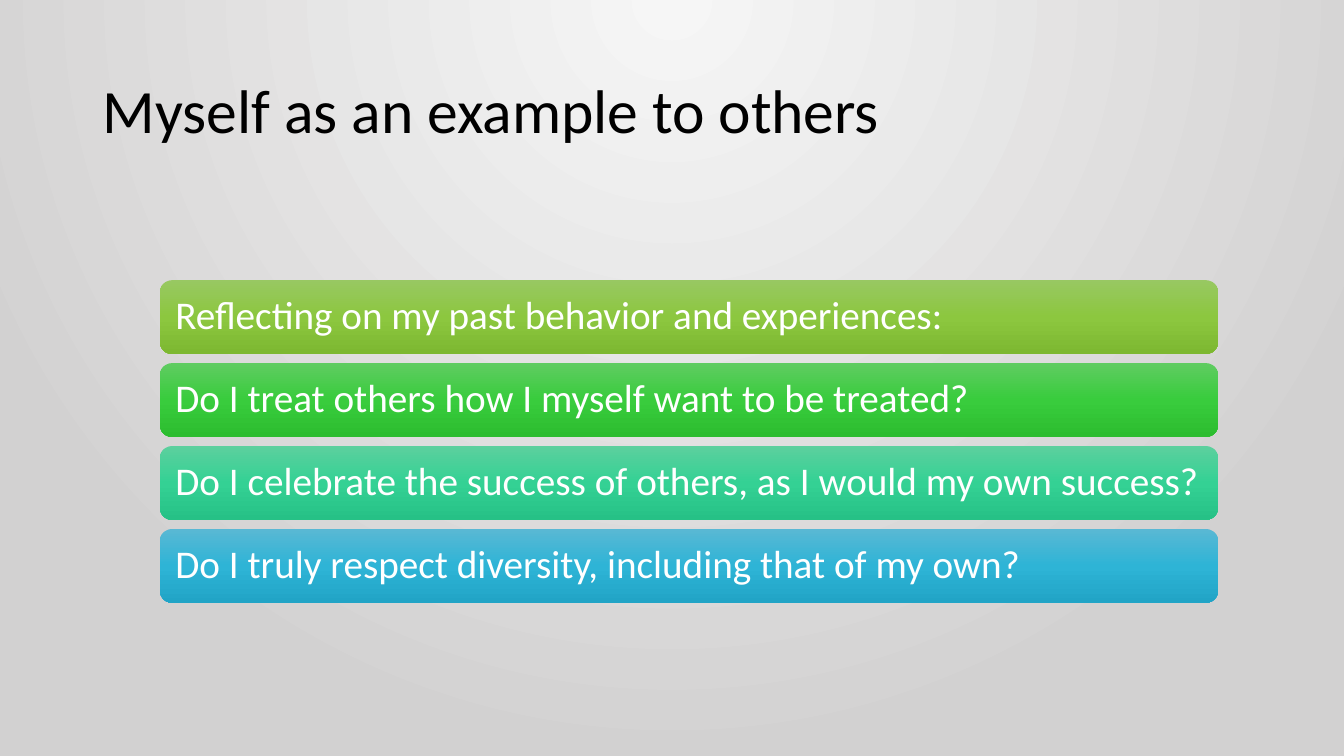
from dataclasses import dataclass

import lxml.etree
import pptx
import pptx.dml.color
import pptx.enum.shapes
import pptx.enum.text
import pptx.oxml
import pptx.oxml.ns
import pptx.slide
import pptx.text.text
import pptx.util

Cm = pptx.util.Cm

COLORS = {
    "title": "000000",
    "prompt": "FFFFFF",
    "backdrop center": "F6F6F6",
    "backdrop edge": "D2D1D1",
    "lime": ("98C862", "8CC73F", "7DB831"),
    "green": ("5FCC61", "39CC3D", "2CBD2F"),
    "mint": ("5CD09E", "34D194", "26C186"),
    "blue": ("59B8D4", "2EB4D6", "21A4C6"),
}
FONT = "Calibri"
DOWNWARD = '<a:lin ang="5400000" scaled="0"/>'
FROM_TOP_CENTER = (
    '<a:path path="circle">'
    '<a:fillToRect l="43000" t="0" r="43000" b="100000"/></a:path>'
)

BAR_LEFT, BAR_TOP = Cm(4.03), Cm(7.06)
BAR_WIDTH, BAR_HEIGHT = Cm(26.67), Cm(1.86)
BAR_PITCH = Cm(2.09)
BAR_INSET = Cm(0.3)


@dataclass(frozen=True)
class Prompt:
    wording: str
    color: str


PROMPTS = (
    Prompt("Reflecting on my past behavior and experiences:", "lime"),
    Prompt("Do I treat others how I myself want to be treated?", "green"),
    Prompt("Do I celebrate the success of others, as I would my own success?", "mint"),
    Prompt("Do I truly respect diversity, including that of my own?", "blue"),
)


def set_gradient(
    owner: lxml.etree.ElementBase, shades: tuple[str, ...], direction: str
) -> None:
    """Replace the owner's first gradient with evenly spaced shades."""
    stops = "".join(
        f'<a:gs pos="{100000 * index // (len(shades) - 1)}">'
        f'<a:srgbClr val="{shade}"/></a:gs>'
        for index, shade in enumerate(shades)
    )
    gradient = pptx.oxml.parse_xml(
        f'<a:gradFill {pptx.oxml.ns.nsdecls("a")} rotWithShape="1">'
        f"<a:gsLst>{stops}</a:gsLst>{direction}</a:gradFill>"
    )
    former = owner.find(".//" + pptx.oxml.ns.qn("a:gradFill"))
    former.getparent().replace(former, gradient)


def write_line(
    frame: pptx.text.text.TextFrame, wording: str, size: int, color: str
) -> None:
    frame.text = wording
    frame.word_wrap = True
    frame.vertical_anchor = pptx.enum.text.MSO_ANCHOR.MIDDLE
    paragraph = frame.paragraphs[0]
    paragraph.alignment = pptx.enum.text.PP_ALIGN.LEFT
    paragraph.line_spacing = 0.9
    font = paragraph.runs[0].font
    font.name = FONT
    font.size = pptx.util.Pt(size)
    font.color.rgb = pptx.dml.color.RGBColor.from_string(color)


def add_prompt_bar(slide: pptx.slide.Slide, prompt: Prompt, top: int) -> None:
    bar = slide.shapes.add_shape(
        pptx.enum.shapes.MSO_SHAPE.ROUNDED_RECTANGLE,
        BAR_LEFT, top, BAR_WIDTH, BAR_HEIGHT,
    )
    bar.shadow.inherit = False
    bar.line.fill.background()
    bar.fill.gradient()
    set_gradient(bar.element, COLORS[prompt.color], DOWNWARD)
    frame = bar.text_frame
    frame.margin_left = frame.margin_right = BAR_INSET
    frame.margin_top = frame.margin_bottom = BAR_INSET
    write_line(frame, prompt.wording, 28, COLORS["prompt"])


def main() -> None:
    deck = pptx.Presentation()
    deck.slide_width, deck.slide_height = Cm(33.87), Cm(19.05)
    slide = deck.slides.add_slide(deck.slide_layouts.get_by_name("Title Only"))

    slide.background.fill.gradient()
    backdrop = (COLORS["backdrop center"], COLORS["backdrop edge"])
    set_gradient(slide.element, backdrop, FROM_TOP_CENTER)

    title = slide.shapes.title
    title.left, title.top = Cm(2.33), Cm(1.01)
    title.width, title.height = Cm(29.21), Cm(3.68)
    write_line(title.text_frame, "Myself as an example to others", 44, COLORS["title"])

    for row, prompt in enumerate(PROMPTS):
        add_prompt_bar(slide, prompt, BAR_TOP + row * BAR_PITCH)

    deck.save("out.pptx")


if __name__ == "__main__":
    main()
